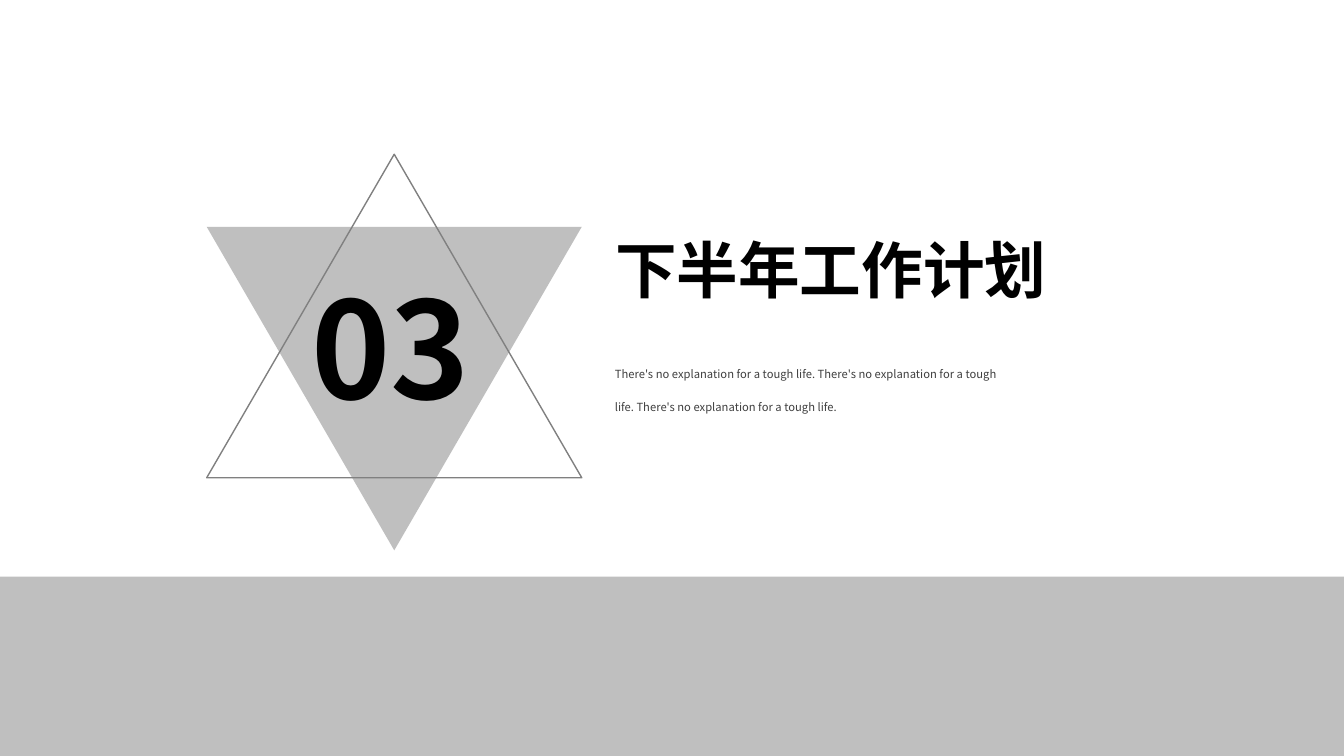
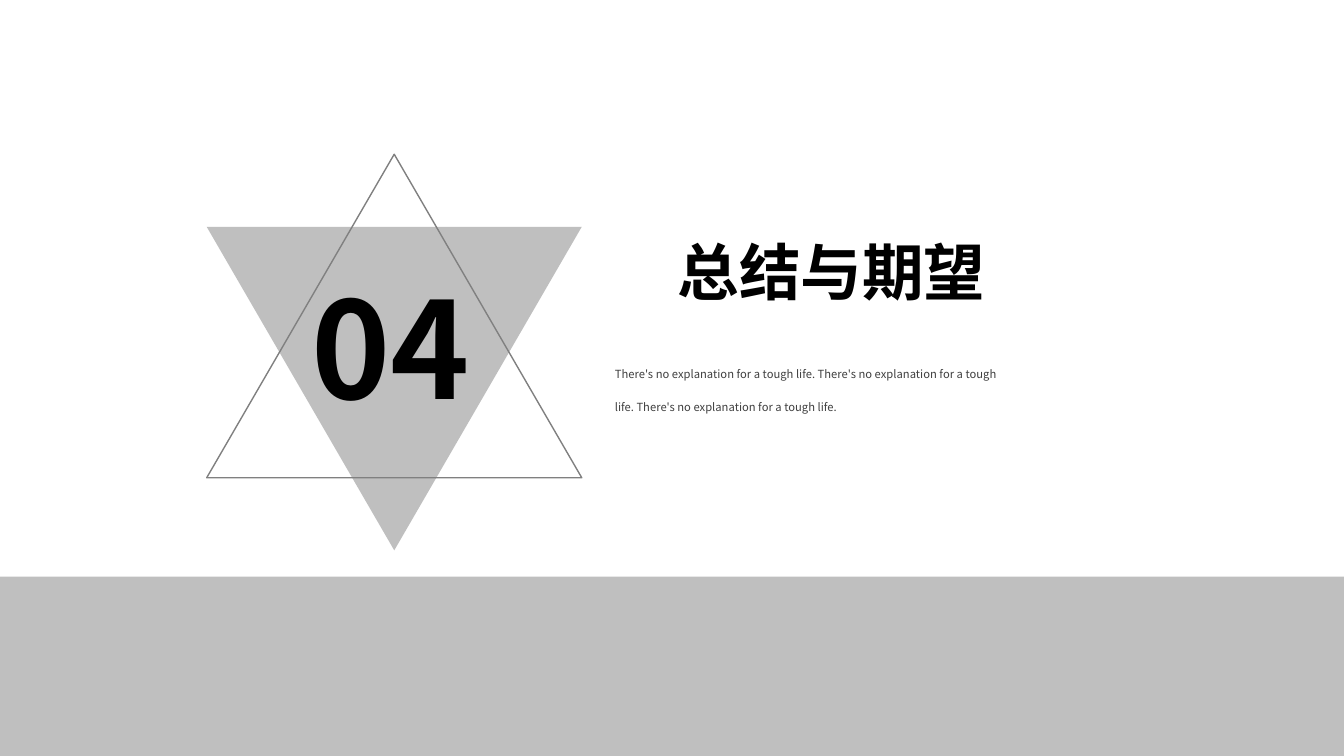
from dataclasses import dataclass
from lxml.etree import SubElement
from pptx import Presentation
from pptx.dml.color import RGBColor as RGB
from pptx.enum.shapes import MSO_SHAPE as Kind
from pptx.enum.text import MSO_ANCHOR as Anchor, MSO_AUTO_SIZE as Fit, PP_ALIGN as Align
from pptx.oxml.ns import qn
from pptx.util import Inches, Pt


@dataclass(frozen=True)
class Theme:
    font: str = "Noto Sans CJK SC"
    ink: RGB = RGB(0x00, 0x00, 0x00)
    body: RGB = RGB(0x40, 0x40, 0x40)
    line: RGB = RGB(0x80, 0x80, 0x80)
    fill: RGB = RGB(0xBF, 0xBF, 0xBF)
    title: Pt = Pt(44)
    number: Pt = Pt(96)
    small: Pt = Pt(8)


theme = Theme()


def write(box, at, text, size, color, bold=False, space=1.0):
    box.left, box.top, box.width, box.height = map(Inches, at)
    frame = box.text_frame
    frame.word_wrap = True
    frame.auto_size = Fit.NONE
    frame.vertical_anchor = Anchor.TOP
    frame.text = text
    para = frame.paragraphs[0]
    para.alignment = Align.LEFT
    para.line_spacing = space
    font = para.font
    font.name, font.size, font.bold = theme.font, size, bold
    font.color.rgb = color
    props = para._p.pPr.find(qn("a:defRPr"))
    SubElement(props, qn("a:ea")).set("typeface", theme.font)


def draw(slide, kind, at, fill=None, line=None):
    shape = slide.shapes.add_shape(kind, *map(Inches, at))
    shape.shadow.inherit = False
    if fill is None:
        shape.fill.background()
    else:
        shape.fill.solid()
        shape.fill.fore_color.rgb = fill
    if line is None:
        shape.line.fill.background()
    else:
        shape.line.color.rgb = line
        shape.line.width = Pt(1)
    return shape


phrase = "There's no explanation for a tough life."
blurb = " ".join([phrase] * 3)
parts = [
    ("03", "下半年工作计划", (6, 2.25, 4.5, 0.84)),
    ("04", "总结与期望", (6.62, 2.27, 4, 0.84)),
]

deck = Presentation()
deck.slide_width, deck.slide_height = Inches(13.33), Inches(7.5)

for number, title, place in parts:
    slide = deck.slides.add_slide(deck.slide_layouts[5])
    shapes = slide.shapes
    write(shapes.title, place, title, theme.title, theme.ink, bold=True)
    solid = draw(slide, Kind.ISOSCELES_TRIANGLE, (2.05, 2.25, 3.72, 3.21), fill=theme.fill)
    solid.rotation = 180
    draw(slide, Kind.ISOSCELES_TRIANGLE, (2.05, 1.53, 3.72, 3.21), line=theme.line)
    label = shapes.add_textbox(0, 0, 0, 0)
    write(label, (2.99, 2.58, 1.83, 1.72), number, theme.number, theme.ink, bold=True)
    note = shapes.add_textbox(0, 0, 0, 0)
    write(note, (6, 3.39, 4.08, 0.72), blurb, theme.small, theme.body, space=2.5)
    draw(slide, Kind.RECTANGLE, (0, 5.72, 13.33, 1.78), fill=theme.fill)

deck.save("out.pptx")
